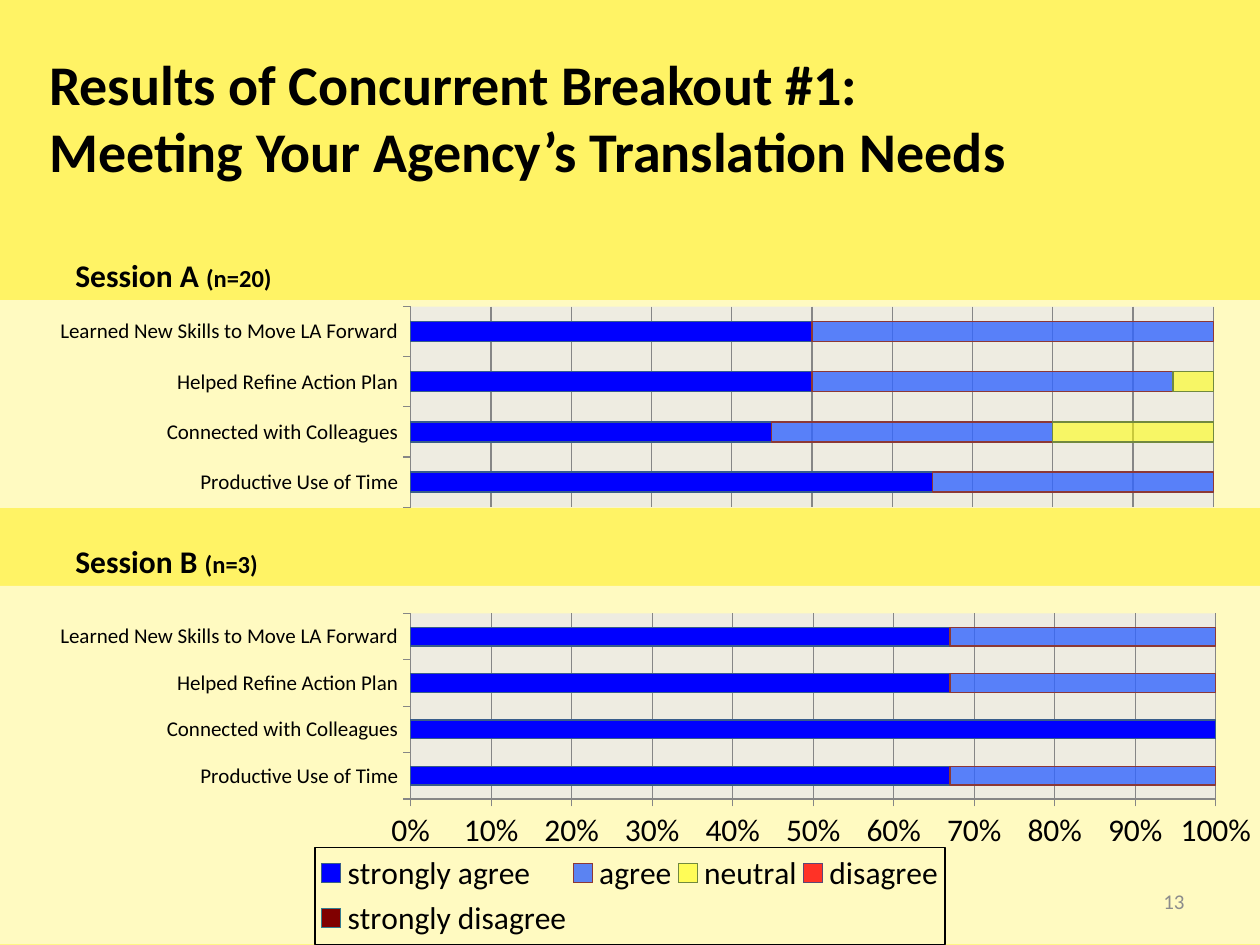
from dataclasses import dataclass

from lxml import etree
from pptx import Presentation
from pptx import util as u
from pptx.chart import data as chart_data
from pptx.dml import color
from pptx.enum import chart as ce
from pptx.enum import text as te
from pptx.oxml import ns


@dataclass(frozen=True)
class Theme:
    font: str = "Calibri"
    background: str = "FFF365"
    panel: str = "FFFAC1"
    plot: str = "EEECE1"
    ink: str = "000000"
    muted: str = "8C8C8C"
    grid: str = "868686"
    title: int = 32
    heading: int = 18
    count: int = 14
    small: int = 12


THEME = Theme()

# Fill, opacity in percent, outline: one entry for each answer
ANSWER_STYLES = [
    ("0000FF", 100, "385D8A"),
    ("3366FF", 80, "8C3836"),
    ("FFFF00", 55, "71893F"),
    ("FF0000", 80, "5C4776"),
    ("800000", 100, "357D91"),
]
ANSWERS = ["strongly agree", "agree", "neutral", "disagree", "strongly disagree"]
QUESTIONS = [
    "Productive Use of Time",
    "Connected with Colleagues",
    "Helped Refine Action Plan",
    "Learned New Skills to Move LA Forward",
]
NONE = [0, 0, 0, 0]
SESSION_A = [[65, 45, 50, 50], [35, 35, 45, 50], [0, 20, 5, 0], NONE, NONE]
SESSION_B = [[67, 100, 67, 67], [33, 0, 33, 33], NONE, NONE, NONE]


def rgb(value):
    return color.RGBColor.from_string(value)


def add_text(slide, spans, left, top, width, height, *, ink=THEME.ink, bold=False,
             align=te.PP_ALIGN.LEFT, anchor=te.MSO_ANCHOR.TOP):
    """Add a text box; spans are (text, size) pairs, "\\n" is a line break."""
    box = slide.shapes.add_textbox(u.Cm(left), u.Cm(top), u.Cm(width), u.Cm(height))
    frame = box.text_frame
    frame.word_wrap = True
    frame.vertical_anchor = anchor
    para = frame.paragraphs[0]
    para.alignment = align
    for words, size in spans:
        for index, line in enumerate(words.split("\n")):
            if index:
                para.add_line_break()
            span = para.add_run()
            span.text = line
            span.font.name = THEME.font
            span.font.size = u.Pt(size)
            span.font.bold = bold
            span.font.color.rgb = rgb(ink)


def shape_properties(fill=None, line=None):
    """Build a c:spPr element with a plain fill and line."""
    def paint(value):
        if value is None:
            return "<a:noFill/>"
        return f'<a:solidFill><a:srgbClr val="{value}"/></a:solidFill>'

    return etree.fromstring(
        f'<c:spPr {ns.nsdecls("c", "a")}>{paint(fill)}'
        f'<a:ln w="9525">{paint(line)}</a:ln></c:spPr>')


def manual_layout(x, y, w, h, inner=False):
    target = '<c:layoutTarget val="inner"/>' if inner else ""
    return etree.fromstring(
        f'<c:layout {ns.nsdecls("c")}><c:manualLayout>{target}'
        '<c:xMode val="edge"/><c:yMode val="edge"/>'
        f'<c:x val="{x}"/><c:y val="{y}"/><c:w val="{w}"/><c:h val="{h}"/>'
        '</c:manualLayout></c:layout>')


def style_series(series, fill, opacity, outline):
    series.format.fill.solid()
    series.format.fill.fore_color.rgb = rgb(fill)
    series.format.line.color.rgb = rgb(outline)
    series.format.line.width = u.Pt(0.75)
    if opacity < 100:
        paint = series._element.find(ns.qn("c:spPr")).find(ns.qn("a:solidFill"))[0]
        etree.SubElement(paint, ns.qn("a:alpha")).set("val", str(opacity * 1000))


def style_axes(chart, show_values):
    questions, shares = chart.category_axis, chart.value_axis
    questions.tick_labels.font.size = u.Pt(THEME.small)
    shares.minimum_scale, shares.maximum_scale = 0, 1
    shares.major_unit = 0.1
    shares.has_major_gridlines = True
    shares.major_gridlines.format.line.color.rgb = rgb(THEME.grid)
    shares.tick_labels.number_format = "0%"
    shares.tick_labels.number_format_is_linked = False
    shares.visible = show_values
    for axis in (questions, shares):
        axis.major_tick_mark = ce.XL_TICK_MARK.OUTSIDE
        axis.format.line.color.rgb = rgb(THEME.grid)


def add_legend(chart):
    chart.has_legend = True
    legend = chart.legend
    legend.position = ce.XL_LEGEND_POSITION.BOTTOM
    legend.include_in_layout = False
    element = legend._element
    element.find(ns.qn("c:overlay")).addprevious(manual_layout(0.25, 0.73, 0.5, 0.27))
    element.find(ns.qn("c:overlay")).addnext(shape_properties(line=THEME.ink))


def add_answer_chart(slide, names, rows, top, height, plot_place, *, with_key):
    """Add a full-width 100% bar chart; with_key shows value labels and legend."""
    answers = chart_data.CategoryChartData()
    answers.categories = QUESTIONS
    for name, values in zip(names, rows):
        answers.add_series(name, values)
    chart = slide.shapes.add_chart(
        ce.XL_CHART_TYPE.BAR_STACKED_100, u.Cm(0), u.Cm(top), u.Cm(25.4),
        u.Cm(height), answers).chart
    chart.has_title = False
    chart.has_legend = False
    chart.font.name = THEME.font
    chart.font.size = u.Pt(THEME.heading)
    chart.font.color.rgb = rgb(THEME.ink)
    plot = chart.plots[0]
    plot.gap_width, plot.overlap, plot.vary_by_categories = 150, 100, False
    for series, style in zip(plot.series, ANSWER_STYLES):
        style_series(series, *style)
    style_axes(chart, with_key)
    if with_key:
        add_legend(chart)

    body = chart._chartSpace.find(ns.qn("c:chart"))
    body.addnext(shape_properties(THEME.panel))
    area = body.find(ns.qn("c:plotArea"))
    for layout in area.findall(ns.qn("c:layout")):
        area.remove(layout)
    area.insert(0, manual_layout(*plot_place, inner=True))
    area.append(shape_properties(THEME.plot))


def add_session_heading(slide, session, count, top):
    add_text(slide, [(f"{session} ", THEME.heading), (count, THEME.count)],
             1.27, top, 7.19, 1.02, bold=True)


def main():
    deck = Presentation()
    deck.slide_width, deck.slide_height = u.Cm(25.4), u.Cm(19.05)
    slide = deck.slides.add_slide(deck.slide_layouts[6])
    slide.background.fill.solid()
    slide.background.fill.fore_color.rgb = rgb(THEME.background)

    title = "Results of Concurrent Breakout #1:\nMeeting Your Agency’s Translation Needs"
    add_text(slide, [(title, THEME.title)], 0.74, 0.76, 24.31, 3.18,
             bold=True, anchor=te.MSO_ANCHOR.MIDDLE)
    add_answer_chart(slide, ANSWERS, SESSION_B, 11.81, 7.24,
                     (0.326, 0.077, 0.639, 0.518), with_key=True)
    series_names = [f"Series {number}" for number in range(1, 6)]
    add_answer_chart(slide, series_names, SESSION_A, 6.05, 4.19,
                     (0.326, 0.031, 0.637, 0.966), with_key=False)
    add_session_heading(slide, "Session A", "(n=20)", 5.03)
    add_session_heading(slide, "Session B", "(n=3)", 10.8)
    add_text(slide, [("13", THEME.small)], 18.21, 17.65, 5.92, 1.02, ink=THEME.muted,
             align=te.PP_ALIGN.RIGHT, anchor=te.MSO_ANCHOR.MIDDLE)
    deck.save("out.pptx")


if __name__ == "__main__":
    main()
